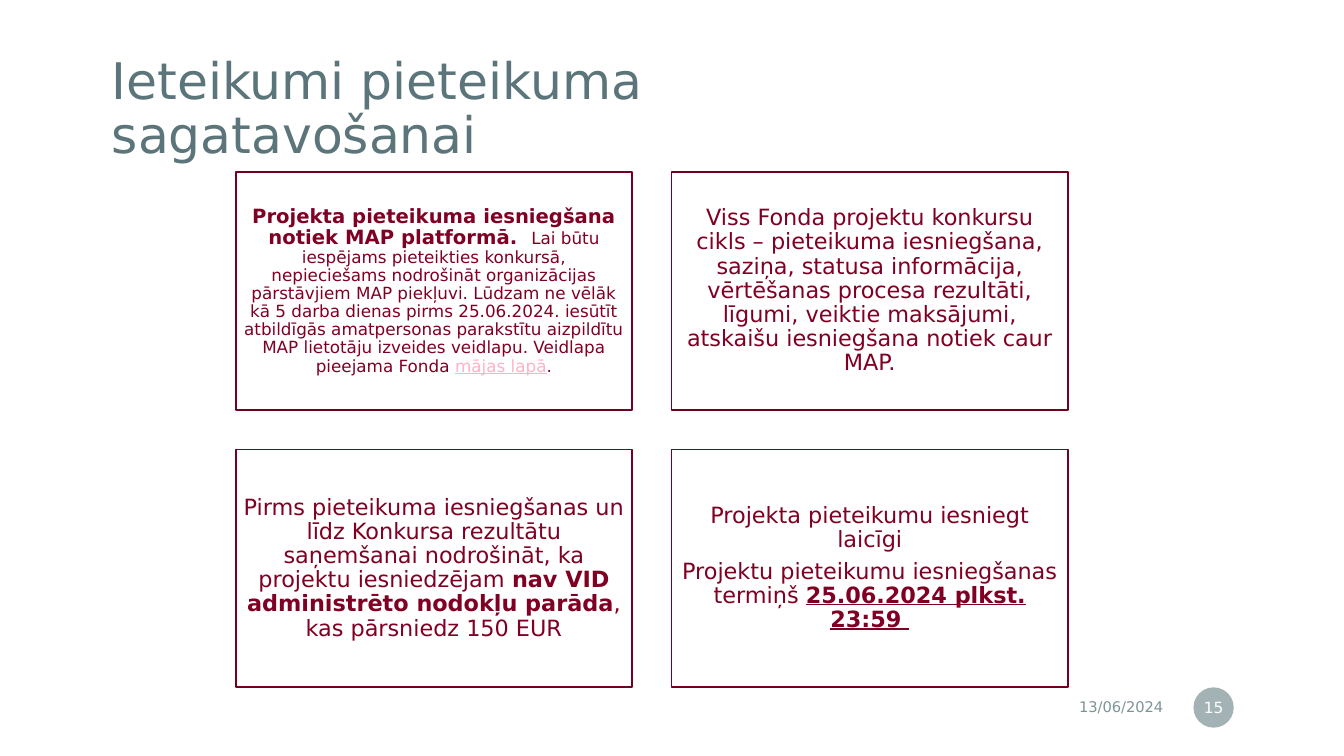
from lxml import etree
from pptx import Presentation
from pptx.dml.color import RGBColor
from pptx.enum.shapes import MSO_SHAPE
from pptx.enum.text import MSO_ANCHOR, PP_ALIGN
from pptx.oxml.ns import qn
from pptx.util import Pt

RECT, OVAL = MSO_SHAPE.RECTANGLE, MSO_SHAPE.OVAL
MIDDLE = MSO_ANCHOR.MIDDLE
LEFT, CENTER, RIGHT = PP_ALIGN.LEFT, PP_ALIGN.CENTER, PP_ALIGN.RIGHT

WHITE = RGBColor(0xFF, 0xFF, 0xFF)
SLATE = RGBColor(0x5B, 0x75, 0x7A)
GREY = RGBColor(0x7C, 0x93, 0x96)
WINE = RGBColor(0x80, 0x00, 0x24)
EDGE = RGBColor(0x74, 0x00, 0x21)
PINK = RGBColor(0xFF, 0xB2, 0xC8)
FONT = "DejaVu Sans"

# Content: a run is (text, size, colour, style), style letters b = bold, u = underline
TITLE = [[("Ieteikumi pieteikuma sagatavošanai", 36, SLATE, "")]]
DATE = [[("13/06/2024", 10.5, GREY, "")]]
PAGE = [[("15", 11, WHITE, "")]]
CARDS = [
    [[("Projekta pieteikuma iesniegšana notiek MAP platformā.  ", 14, WINE, "b"),
      ("Lai būtu iespējams pieteikties konkursā, nepieciešams nodrošināt "
       "organizācijas pārstāvjiem MAP piekļuvi. Lūdzam ne vēlāk kā 5 darba "
       "dienas pirms 25.06.2024. iesūtīt atbildīgās amatpersonas parakstītu "
       "aizpildītu MAP lietotāju izveides veidlapu. Veidlapa pieejama Fonda ",
       12, WINE, ""),
      ("mājas lapā", 12, PINK, "u"),
      (".", 12, WINE, "")]],
    [[("Viss Fonda projektu konkursu cikls – pieteikuma iesniegšana, saziņa, "
       "statusa informācija, vērtēšanas procesa rezultāti, līgumi, veiktie "
       "maksājumi, atskaišu iesniegšana notiek caur MAP.", 16, WINE, "")]],
    [[("Pirms pieteikuma iesniegšanas un līdz Konkursa rezultātu saņemšanai "
       "nodrošināt, ka projektu iesniedzējam ", 16, WINE, ""),
      ("nav VID administrēto nodokļu parāda", 16, WINE, "b"),
      (", kas pārsniedz 150 EUR", 16, WINE, "")]],
    [[("Projekta pieteikumu iesniegt laicīgi", 16, WINE, "")],
     [("Projektu pieteikumu iesniegšanas termiņš ", 16, WINE, ""),
      ("25.06.2024 plkst. 23:59 ", 16, WINE, "bu")]],
]

# Card grid
COLS = 2
CARD_X, CARD_Y = 168.5, 123
CARD_W, CARD_H = 283, 169.8
GAP = 28.3
GROW = 0.35  # space after a paragraph, as a share of its text size


def write(shape, paras, align, pad, lines=1.0):
    frame = shape.text_frame
    frame.word_wrap = True
    frame.vertical_anchor = MIDDLE
    frame.margin_left = frame.margin_right = Pt(pad[0])
    frame.margin_top = frame.margin_bottom = Pt(pad[1])
    for i, runs in enumerate(paras):
        para = frame.paragraphs[0] if i == 0 else frame.add_paragraph()
        para.alignment = align
        para.line_spacing = lines
        if i < len(paras) - 1:
            para.space_after = Pt(runs[0][1] * GROW)
        for text, size, color, style in runs:
            run = para.add_run()
            run.text = text
            font = run.font
            font.name, font.size = FONT, Pt(size)
            font.color.rgb = color
            font.bold = "b" in style
            font.underline = "u" in style


def add_text(slide, box, *args):
    write(slide.shapes.add_textbox(*map(Pt, box)), *args)


def add_shape(slide, kind, box, fill):
    shape = slide.shapes.add_shape(kind, *map(Pt, box))
    shape.shadow.inherit = False
    shape.fill.solid()
    shape.fill.fore_color.rgb = fill
    return shape


def main():
    deck = Presentation()
    deck.slide_width, deck.slide_height = Pt(960), Pt(540)
    slide = deck.slides.add_slide(deck.slide_layouts[6])

    # Title and date
    add_text(slide, (65.5, 34.5, 628.5, 88.5), TITLE, LEFT, (14.4, 14.4), 0.9)
    add_text(slide, (621.5, 492.5, 216.5, 25), DATE, RIGHT, (7.2, 3.6))

    # Page number on a see-through disc
    disc = add_shape(slide, OVAL, (852.5, 491, 28.8, 28.8), GREY)
    disc.line.fill.background()
    tint = disc.fill._xPr.find(qn("a:solidFill"))[0]
    etree.SubElement(tint, qn("a:alpha"), val="70000")
    write(disc, PAGE, CENTER, (1.4, 3.6))

    # Cards
    for i, paras in enumerate(CARDS):
        row, col = divmod(i, COLS)
        x = CARD_X + col * (CARD_W + GAP)
        y = CARD_Y + row * (CARD_H + GAP)
        card = add_shape(slide, RECT, (x, y, CARD_W, CARD_H), WHITE)
        card.line.color.rgb = EDGE
        card.line.width = Pt(1)
        write(card, paras, CENTER, (4.8, 4.8), 0.9)

    deck.save("out.pptx")


if __name__ == "__main__":
    main()
